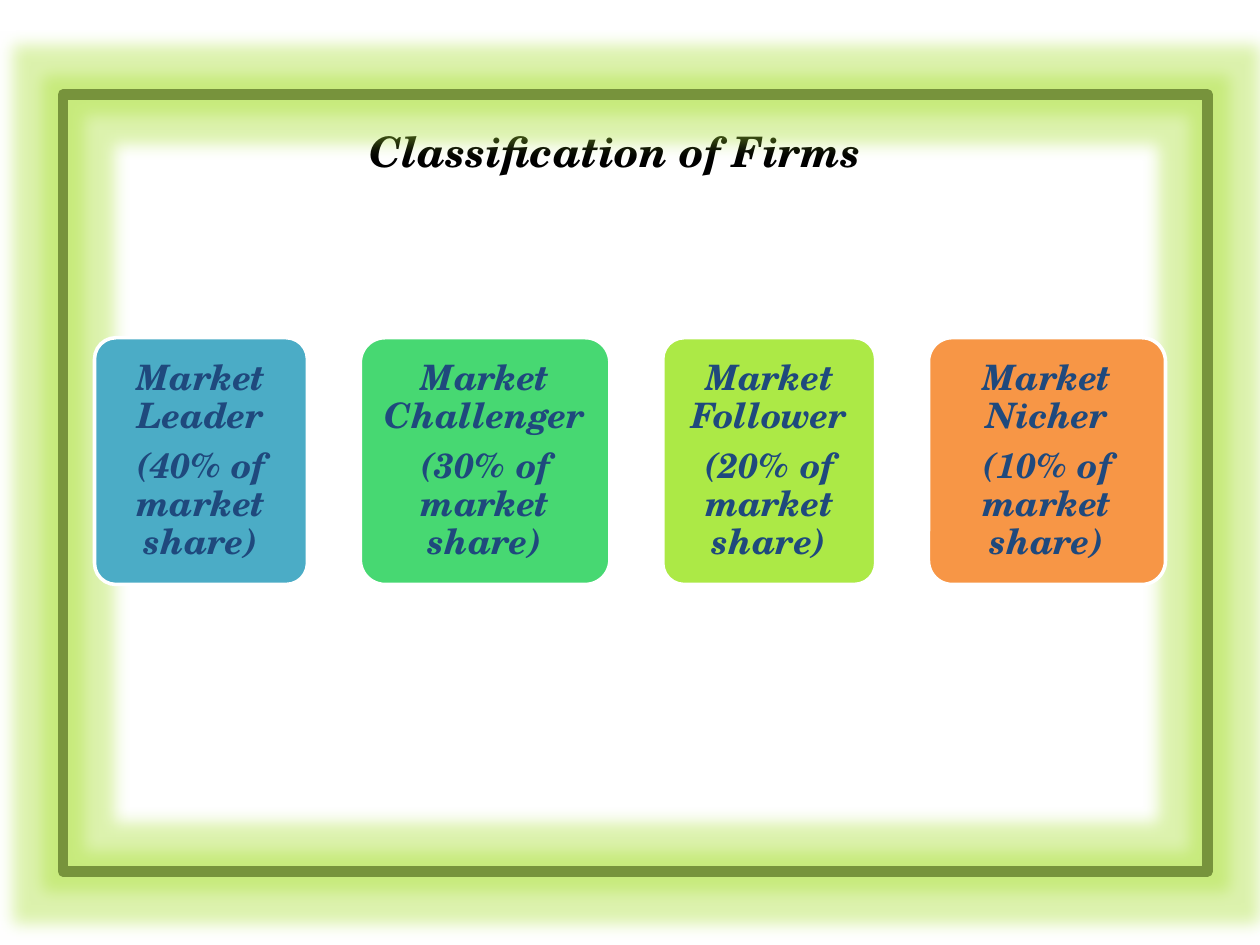
from lxml.etree import SubElement
from pptx import Presentation
from pptx.dml.color import RGBColor
from pptx.enum.shapes import MSO_SHAPE
from pptx.enum.text import MSO_ANCHOR, MSO_AUTO_SIZE, PP_ALIGN
from pptx.oxml.ns import qn
from pptx.util import Pt

FONT = "TeX Gyre Schola"
CARDS = [  # name, share, fill, width
    ("Market Leader", "40%", "4BACC6", 121.7),
    ("Market Challenger", "30%", "47D872", 142.6),
    ("Market Follower", "20%", "ACE946", 121.7),
    ("Market Nicher", "10%", "F79646", 135.4),
]


def rgb(value):
    return RGBColor.from_string(value)


def set_all(obj, values):
    for name, value in values.items():
        setattr(obj, name, value)


def place(shape, x, y, w, h):
    set_all(shape, dict(left=Pt(x), top=Pt(y), width=Pt(w), height=Pt(h)))


def set_margins(tf, left, top, right, bottom):
    set_all(tf, dict(margin_left=Pt(left), margin_top=Pt(top),
                     margin_right=Pt(right), margin_bottom=Pt(bottom)))


def write(p, text, size, color, **spacing):
    set_all(p, dict(alignment=PP_ALIGN.CENTER, **spacing))
    r = p.add_run()
    r.text = text
    set_all(r.font, dict(name=FONT, size=Pt(size), bold=True, italic=True))
    r.font.color.rgb = rgb(color)


def outline(shape, color, width):
    shape.line.color.rgb = rgb(color)
    shape.line.width = Pt(width)


def add_frame(s, x, y, w, h):
    sp = s.shapes.add_shape(MSO_SHAPE.RECTANGLE, Pt(x), Pt(y), Pt(w), Pt(h))
    sp.fill.background()
    outline(sp, "77933C", 6)
    # Soft green glow around the line
    sp.shadow.inherit = False
    effects = sp.element.spPr.find(qn("a:effectLst"))
    glow = SubElement(effects, qn("a:glow"), rad=str(Pt(18)))
    color = SubElement(glow, qn("a:srgbClr"), val="A9E034")
    SubElement(color, qn("a:alpha"), val="40000")


def add_title(s, x, y, w, h):
    title = s.shapes.title
    place(title, x, y, w, h)
    tf = title.text_frame
    set_all(tf, dict(vertical_anchor=MSO_ANCHOR.TOP, word_wrap=True,
                     auto_size=MSO_AUTO_SIZE.NONE))
    set_margins(tf, 0, 0.9, 0, 0)
    p = tf.paragraphs[0]
    write(p, "Classification of Firms", 24, "000000", space_before=Pt(0.9))
    pPr = p._p.get_or_add_pPr()
    pPr.set("marL", str(Pt(9.2)))
    pPr.set("indent", str(Pt(-8.7)))


def add_card(s, x, y, w, h, name, share, fill):
    sp = s.shapes.add_shape(MSO_SHAPE.ROUNDED_RECTANGLE, Pt(x), Pt(y), Pt(w), Pt(h))
    sp.adjustments[0] = 0.1
    sp.shadow.inherit = False
    sp.fill.solid()
    sp.fill.fore_color.rgb = rgb(fill)
    outline(sp, "FFFFFF", 2)
    tf = sp.text_frame
    set_all(tf, dict(vertical_anchor=MSO_ANCHOR.MIDDLE, word_wrap=True))
    set_margins(tf, 3, 2, 3, 2)
    for i, text in enumerate((name, f"({share} of market share)")):
        p = tf.add_paragraph() if i else tf.paragraphs[0]
        write(p, text, 20, "1F497D", line_spacing=0.9, space_after=Pt(7))


def add_cards(s, x, y, w, h):
    # Equal gaps between cards of different widths
    gap = (w - sum(card[3] for card in CARDS)) / (len(CARDS) - 1)
    for name, share, fill, width in CARDS:
        add_card(s, x, y, width, h, name, share, fill)
        x += width + gap


def main():
    prs = Presentation()
    prs.slide_width, prs.slide_height = Pt(720), Pt(540)
    s = prs.slides.add_slide(prs.slide_layouts[5])
    add_frame(s, 36, 54, 654, 444)
    add_title(s, 126, 70.6, 450, 30.2)
    add_cards(s, 54, 193, 612, 141)
    prs.save("out.pptx")


if __name__ == "__main__":
    main()
